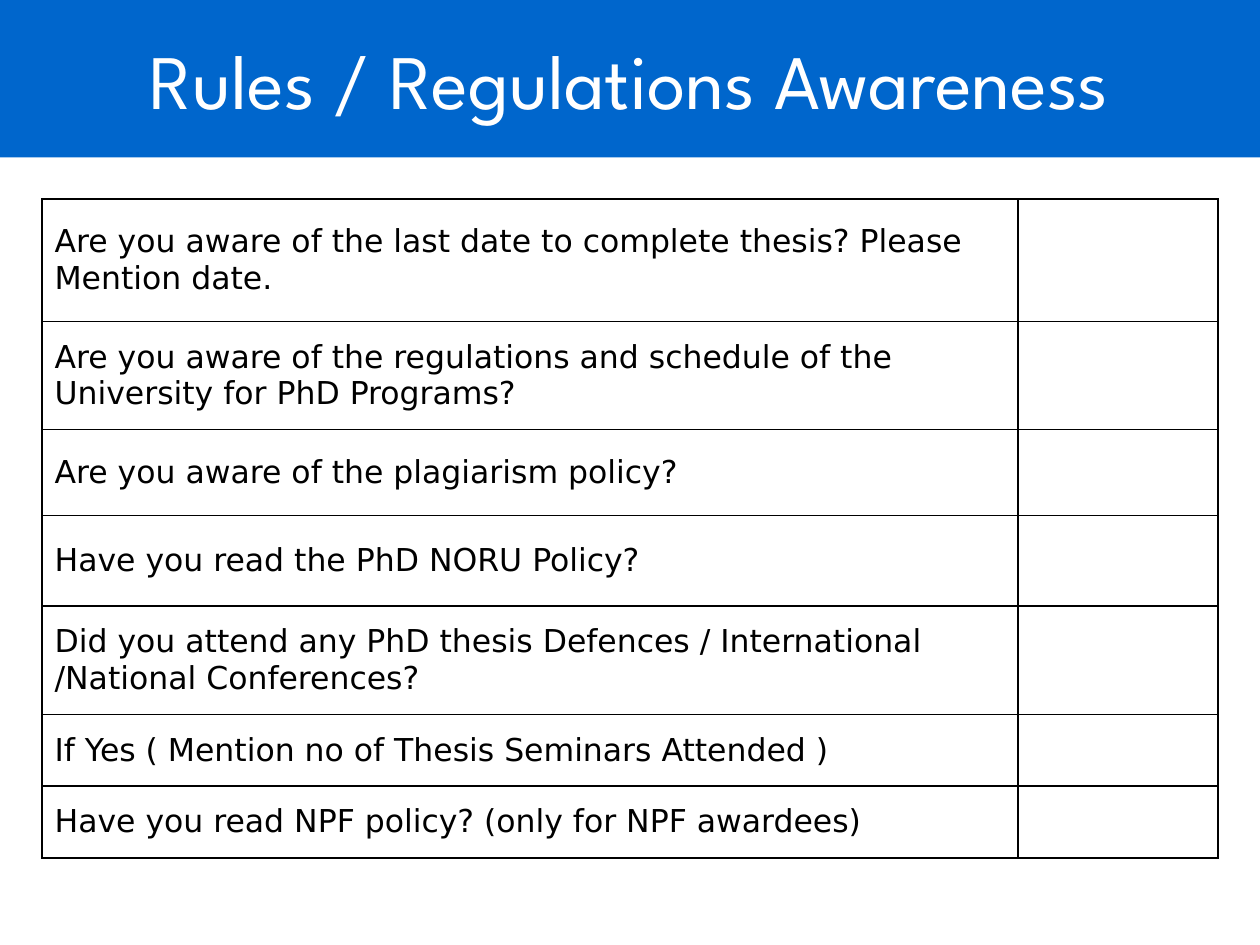
from dataclasses import dataclass

import lxml.etree
import pptx
import pptx.dml.color
import pptx.enum.text
import pptx.oxml.ns
import pptx.util


@dataclass(frozen=True)
class Theme:
    banner: str = "0066CC"
    paper: str = "FFFFFF"
    ink: str = "000000"
    title_font: str = "League Spartan"
    body_font: str = "DejaVu Sans"
    title_size: int = 44
    body_size: int = 18
    rule_width: int = 1


@dataclass(frozen=True)
class Question:
    wording: str
    height: float  # inches


THEME = Theme()
WIDTH, HEIGHT = pptx.util.Inches(10), pptx.util.Inches(7.5)
BANNER_SHARE = 1 / 6  # of the slide's height
MARGIN_SHARE = 1 / 30  # of the slide's width
TABLE_TOP = pptx.util.Inches(1.58)
QUESTION_SHARE = 0.83  # of the table's width

QUESTIONS = [
    Question("Are you aware of the last date to complete thesis? Please Mention date.", 0.97),
    Question("Are you aware of the regulations and schedule of the University for PhD Programs?", 0.86),
    Question("Are you aware of the plagiarism policy?", 0.68),
    Question("Have you read the PhD NORU Policy?", 0.72),
    Question("Did you attend any PhD thesis Defences / International /National Conferences?", 0.86),
    Question("If Yes ( Mention no of Thesis Seminars Attended )", 0.57),
    Question("Have you read NPF policy? (only for NPF awardees)", 0.57),
]


def rgb(value: str) -> pptx.dml.color.RGBColor:
    return pptx.dml.color.RGBColor.from_string(value)


def style_font(font, name: str, size: int, color: str) -> None:
    font.name = name
    font.size = pptx.util.Pt(size)
    font.color.rgb = rgb(color)


def draw_banner(slide, wording: str) -> None:
    banner = slide.shapes.title
    banner.left, banner.top = 0, 0
    banner.width, banner.height = WIDTH, round(HEIGHT * BANNER_SHARE)
    banner.fill.solid()
    banner.fill.fore_color.rgb = rgb(THEME.banner)
    frame = banner.text_frame
    frame.text = wording
    frame.auto_size = pptx.enum.text.MSO_AUTO_SIZE.NONE
    frame.vertical_anchor = pptx.enum.text.MSO_ANCHOR.MIDDLE
    heading = frame.paragraphs[0]
    heading.alignment = pptx.enum.text.PP_ALIGN.CENTER
    style_font(heading.runs[0].font, THEME.title_font, THEME.title_size, THEME.paper)


def rule_cell(cell) -> None:
    """Give a cell its four borders, which must come before its fill."""
    properties = cell._tc.get_or_add_tcPr()
    for position, side in enumerate(("lnL", "lnR", "lnT", "lnB")):
        border = lxml.etree.Element(
            pptx.oxml.ns.qn(f"a:{side}"), w=str(pptx.util.Pt(THEME.rule_width))
        )
        fill = lxml.etree.SubElement(border, pptx.oxml.ns.qn("a:solidFill"))
        lxml.etree.SubElement(fill, pptx.oxml.ns.qn("a:srgbClr"), val=THEME.ink)
        properties.insert(position, border)


def draw_checklist(slide, questions: list[Question]) -> None:
    margin = round(WIDTH * MARGIN_SHARE)
    width = WIDTH - 2 * margin
    height = pptx.util.Inches(sum(question.height for question in questions))
    checklist = slide.shapes.add_table(
        len(questions), 2, margin, TABLE_TOP, width, height
    ).table
    checklist.first_row = False
    checklist.horz_banding = False
    checklist.columns[0].width = round(width * QUESTION_SHARE)
    checklist.columns[1].width = width - checklist.columns[0].width

    for row, question in zip(checklist.rows, questions):
        row.height = pptx.util.Inches(question.height)
        row.cells[0].text_frame.text = question.wording
        for cell in row.cells:
            cell.vertical_anchor = pptx.enum.text.MSO_ANCHOR.MIDDLE
            cell.fill.solid()
            cell.fill.fore_color.rgb = rgb(THEME.paper)
            rule_cell(cell)
            for run in cell.text_frame.paragraphs[0].runs:
                style_font(run.font, THEME.body_font, THEME.body_size, THEME.ink)


def main() -> None:
    presentation = pptx.Presentation()
    presentation.slide_width, presentation.slide_height = WIDTH, HEIGHT
    slide = presentation.slides.add_slide(presentation.slide_layouts.get_by_name("Title Only"))

    # Title across the full width
    draw_banner(slide, "Rules / Regulations Awareness")

    # Questions with an empty column for the answers
    draw_checklist(slide, QUESTIONS)

    presentation.save("out.pptx")


if __name__ == "__main__":
    main()
